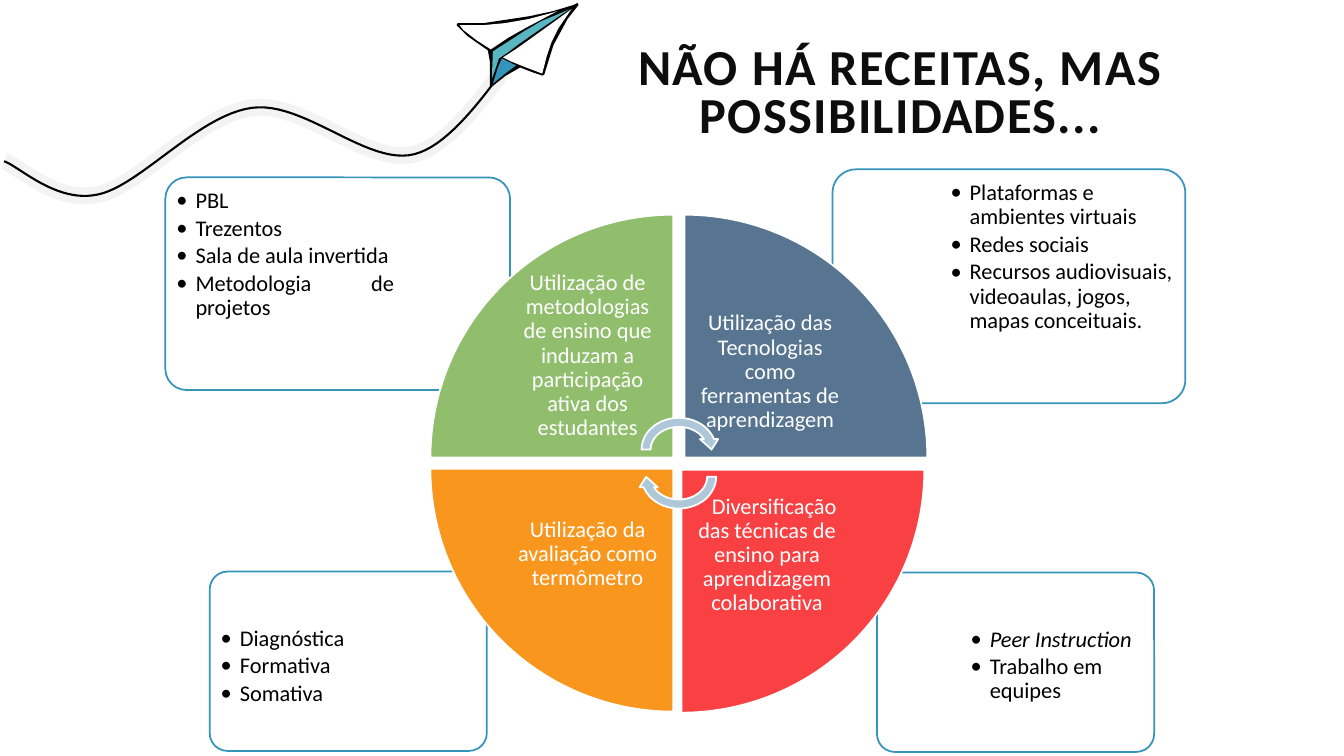
from lxml import etree
from pptx import Presentation
from pptx.dml.color import RGBColor
from pptx.enum.shapes import MSO_SHAPE
from pptx.enum.text import MSO_ANCHOR, PP_ALIGN
from pptx.oxml.ns import qn
from pptx.util import Inches, Pt

WHITE = RGBColor(0xFF, 0xFF, 0xFF)
BLACK = RGBColor(0x00, 0x00, 0x00)
TITLE_INK = RGBColor(0x0D, 0x0D, 0x0D)
BLUE = RGBColor(0x34, 0x94, 0xBA)
TEAL = RGBColor(0x58, 0xB6, 0xC0)
GREEN = RGBColor(0x90, 0xBE, 0x6D)
SLATE = RGBColor(0x57, 0x75, 0x90)
RED = RGBColor(0xF9, 0x41, 0x44)
ORANGE = RGBColor(0xF8, 0x96, 0x1E)
PALE_BLUE = RGBColor(0xAE, 0xC8, 0xD9)
PALE_GREY = RGBColor(0xF3, 0xF3, 0xF3)

WEDGE_SIZE, LABEL_SIZE = 2.41, 1.7

# card box, text box, alignment, bullets
CARDS = [
    ((8.7, 5.68, 2.75, 1.78), (9.56, 6.16, 1.84, 1.26), PP_ALIGN.LEFT,
     ["Peer Instruction", "Trabalho em equipes"]),
    ((2.08, 5.67, 2.75, 1.78), (2.12, 6.15, 1.84, 1.26), PP_ALIGN.LEFT,
     ["Diagnóstica", "Formativa", "Somativa"]),
    ((8.26, 1.68, 3.5, 2.32), (9.36, 1.73, 2.35, 1.64), PP_ALIGN.LEFT,
     ["Plataformas e ambientes virtuais", "Redes sociais",
      "Recursos audiovisuais, videoaulas, jogos, mapas conceituais."]),
    ((1.64, 1.76, 3.42, 2.11), (1.68, 1.81, 2.3, 1.49), PP_ALIGN.JUSTIFY,
     ["PBL", "Trezentos", "Sala de aula invertida", "Metodologia de projetos"]),
]
ITALIC_BULLETS = {"Peer Instruction"}

# left, top, rotation, colour, label, rise of the label, first-line indent
WEDGES = [
    (4.27, 2.13, 0, GREEN, "Utilização de metodologias de ensino que induzam "
     "a participação ativa dos estudantes", 0.16, 0),
    (6.79, 2.13, 90, SLATE, "Utilização das Tecnologias como ferramentas de "
     "aprendizagem", 0, 0),
    (6.76, 4.66, 180, RED, "Diversificação das técnicas de ensino para "
     "aprendizagem colaborativa", 0, 0.14),
    (4.27, 4.65, 270, ORANGE, "Utilização da avaliação como termômetro", 0, 0),
]

TRAIL_START = (0.04, 1.6)
TRAIL_CURVES = [
    ((0.19, 1.65), (0.56, 2.02), (0.97, 1.93)),
    ((1.38, 1.85), (1.97, 1.14), (2.5, 1.07)),
    ((3.02, 1), (3.65, 1.65), (4.11, 1.53)),
    ((4.56, 1.42), (5.04, 0.58), (5.23, 0.39)),
]

# the black silhouette lies below and shows between the other parts
PLANE_PARTS = [
    (BLACK, [(5.73, 0.03), (5.69, 0.05), (5.49, 0.11), (5.26, 0.16), (4.8, 0.23),
             (4.54, 0.23), (4.53, 0.25), (4.64, 0.36), (4.84, 0.5), (4.86, 0.61),
             (4.86, 0.85), (4.88, 0.86), (5.02, 0.75), (5.16, 0.67), (5.29, 0.72),
             (5.38, 0.75), (5.4, 0.74), (5.49, 0.45), (5.63, 0.19), (5.74, 0.05)]),
    (WHITE, [(5.53, 0.11), (5.47, 0.13), (5.24, 0.19), (5.01, 0.23), (4.79, 0.25),
             (4.56, 0.25), (4.6, 0.3), (4.73, 0.4), (4.87, 0.49), (5.05, 0.37),
             (5.21, 0.28), (5.38, 0.19)]),
    (TEAL, [(5.65, 0.09), (5.54, 0.14), (5.37, 0.21), (5.2, 0.31), (4.89, 0.51),
            (4.88, 0.78), (4.91, 0.7), (4.95, 0.58), (5.04, 0.52), (5.13, 0.45),
            (5.33, 0.31)]),
    (BLUE, [(4.98, 0.58), (4.94, 0.67), (4.89, 0.83), (5, 0.74), (5.12, 0.65)]),
    (WHITE, [(5.67, 0.09), (5.52, 0.2), (5.13, 0.48), (4.99, 0.57), (5.07, 0.61),
             (5.22, 0.67), (5.38, 0.73), (5.42, 0.57), (5.47, 0.42), (5.54, 0.28)]),
]


def trail_points(steps=24):
    """Points along the chain of cubic curves."""
    points = [TRAIL_START]
    for first, second, end in TRAIL_CURVES:
        start = points[-1]
        for step in range(1, steps + 1):
            t = step / steps
            u = 1 - t
            points.append(tuple(
                u**3 * a + 3 * u * u * t * b + 3 * u * t * t * c + t**3 * d
                for a, b, c, d in zip(start, first, second, end)))
    return points


class SlideBuilder:
    def __init__(self, slide, font="Calibri", size=16):
        self.shapes = slide.shapes
        self.font = font
        self.size = size

    def paint(self, shape, fill, line, width=1.25):
        shape.shadow.inherit = False
        if fill is None:
            shape.fill.background()
        else:
            shape.fill.solid()
            shape.fill.fore_color.rgb = fill
        if line is None:
            shape.line.fill.background()
        else:
            shape.line.color.rgb = line
            shape.line.width = Pt(width)

    def preset(self, kind, box, fill, line=WHITE, rotation=0):
        shape = self.shapes.add_shape(kind, *map(Inches, box))
        self.paint(shape, fill, line)
        shape.rotation = rotation
        return shape

    def outline(self, points, fill=None, line=None, width=1.25):
        """Draw a closed shape when filled, an open line otherwise."""
        corners = [(Inches(x), Inches(y)) for x, y in points]
        builder = self.shapes.build_freeform(*corners[0])
        builder.add_line_segments(corners[1:], close=fill is not None)
        self.paint(builder.convert_to_shape(), fill, line, width)

    def text(self, box, lines, color, align, inset, size=None, spacing=0.9,
             after=0, anchor=MSO_ANCHOR.TOP):
        """Add a wrapped text box and return its paragraphs."""
        frame = self.shapes.add_textbox(*map(Inches, box)).text_frame
        frame.word_wrap = True
        frame.vertical_anchor = anchor
        frame.margin_left = frame.margin_right = Inches(inset)
        frame.margin_top = frame.margin_bottom = Inches(inset)
        frame.text = "\n".join(lines)
        for paragraph in frame.paragraphs:
            paragraph.alignment = align
            paragraph.line_spacing = spacing
            paragraph.space_after = Pt(after)
            paragraph.font.name = self.font
            paragraph.font.size = Pt(size or self.size)
            paragraph.font.color.rgb = color
        return frame.paragraphs

    def indent(self, paragraph, first_line, left=0):
        properties = paragraph._p.get_or_add_pPr()
        properties.set("marL", str(Inches(left)))
        properties.set("indent", str(Inches(first_line)))
        return properties

    def title(self, box, wording):
        heading = self.text(box, [wording], TITLE_INK, PP_ALIGN.CENTER, 0.05,
                            size=36, spacing=0.8, anchor=MSO_ANCHOR.MIDDLE)[0]
        heading.font.bold = True
        heading.font._element.set("spc", "100")

    def card(self, box, text_box, align, bullets):
        self.preset(MSO_SHAPE.ROUNDED_RECTANGLE, box, WHITE, BLUE).adjustments[0] = 0.1
        for paragraph in self.text(text_box, bullets, BLACK, align, 0.07, after=2.4):
            if paragraph.text in ITALIC_BULLETS:
                paragraph.font.italic = True
            properties = self.indent(paragraph, -0.19, 0.19)
            run_defaults = properties.find(qn("a:defRPr"))
            run_defaults.addprevious(etree.Element(qn("a:buFont"), typeface=self.font))
            run_defaults.addprevious(etree.Element(qn("a:buChar"), char="•"))

    def wedge(self, left, top, rotation, color, label, rise, first_line):
        self.preset(MSO_SHAPE.PIE_WEDGE, (left, top, WEDGE_SIZE, WEDGE_SIZE),
                    color, rotation=rotation)
        inner = WEDGE_SIZE - LABEL_SIZE
        label_left = left + (inner if rotation in (0, 270) else 0)
        label_top = top + (inner if rotation in (0, 90) else 0) - rise
        paragraph = self.text((label_left, label_top, LABEL_SIZE, LABEL_SIZE), [label],
                              WHITE, PP_ALIGN.CENTER, 0.12, after=5.6,
                              anchor=MSO_ANCHOR.MIDDLE)[0]
        if first_line:
            self.indent(paragraph, first_line)


def main():
    deck = Presentation()
    deck.slide_width, deck.slide_height = Inches(40 / 3), Inches(7.5)
    page = SlideBuilder(deck.slides.add_slide(deck.slide_layouts[6]))

    page.title((4.54, 0.48, 8.79, 0.92), "NÃO HÁ RECEITAS, MAS POSSIBILIDADES...")
    for card in CARDS:
        page.card(*card)
    for wedge in WEDGES:
        page.wedge(*wedge)
    for top, rotation in ((4.1, 0), (4.37, 180)):
        page.preset(MSO_SHAPE.CIRCULAR_ARROW, (6.32, top, 0.83, 0.72), PALE_BLUE,
                    rotation=rotation)

    trail = trail_points()
    for color, width in ((PALE_GREY, 12), (BLACK, 1.5)):
        page.outline(trail, line=color, width=width)
    for color, corners in PLANE_PARTS:
        page.outline(corners, fill=color)

    deck.save("out.pptx")


if __name__ == "__main__":
    main()
